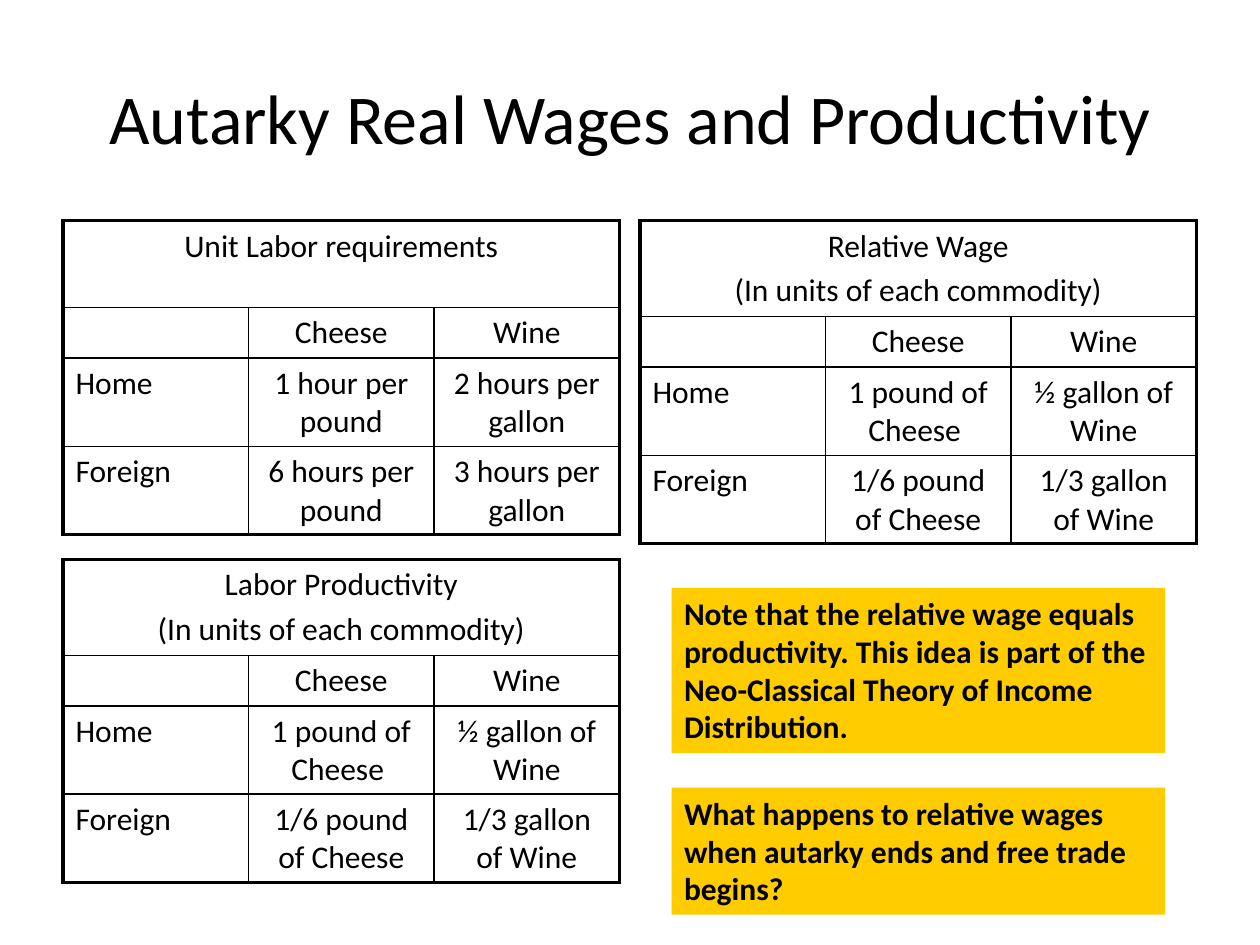
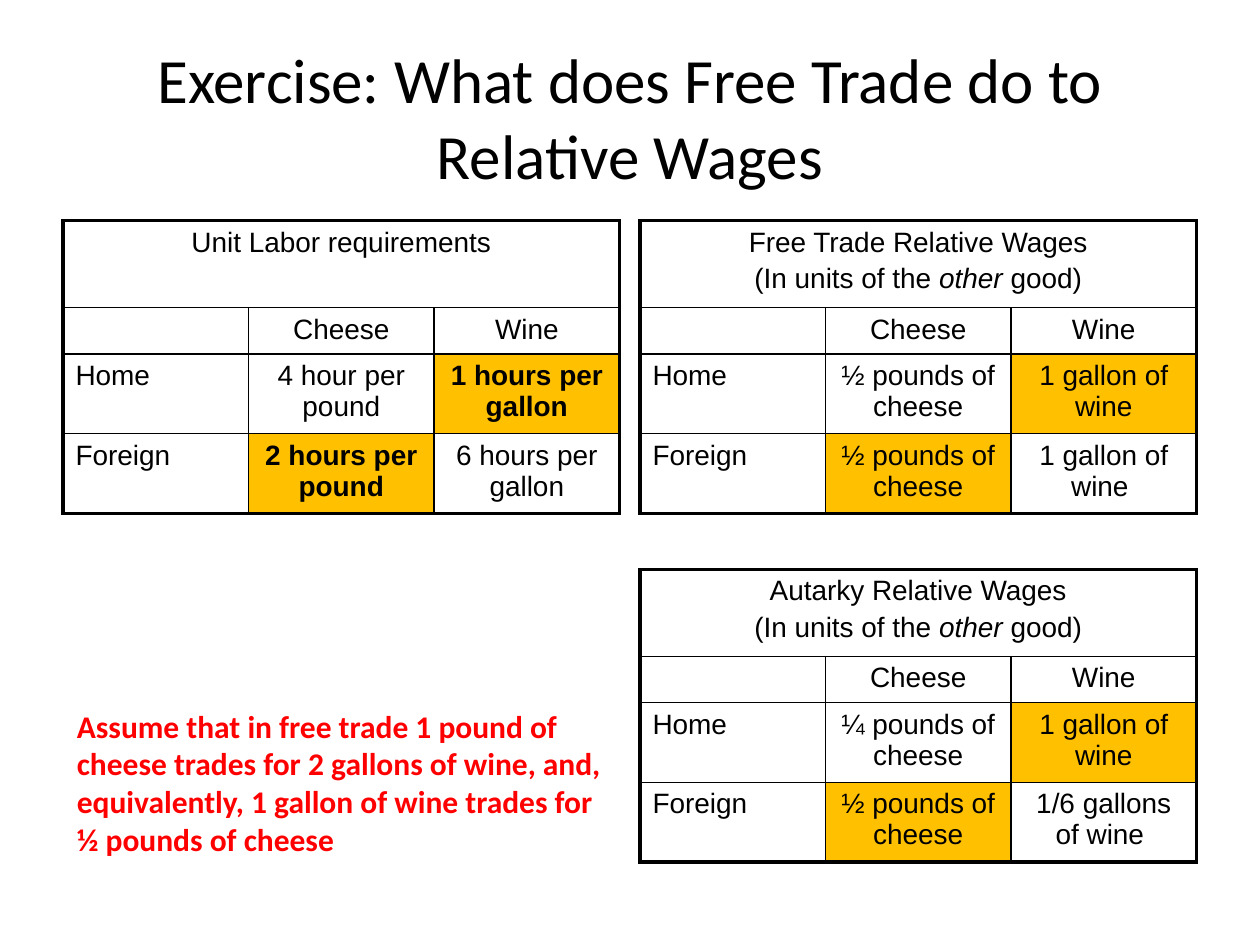
from dataclasses import dataclass

from lxml.etree import SubElement
from pptx import Presentation
from pptx.dml.color import RGBColor
from pptx.enum.shapes import MSO_SHAPE
from pptx.enum.text import MSO_ANCHOR as Anchor, MSO_AUTO_SIZE as AutoSize, PP_ALIGN as Align
from pptx.oxml.ns import qn
from pptx.util import Cm, Pt


@dataclass(frozen=True)
class Theme:
    ink: str = "000000"
    note_fill: str = "FFCC00"
    highlight: str = "FFC000"
    warning: str = "FF0000"
    font: str = "Calibri"
    exercise_font: str = "Arial"
    title_size: int = 40
    long_title_size: int = 36
    body_size: int = 18
    exercise_size: int = 16
    outer_line: float = 2.25
    inner_line: float = 1


THEME = Theme()
LEFT, RIGHT, TOP = 1.27, 12.9, 4.45
COLUMN = 3.74
NOTE_LEFT, NOTE_WIDTH = 13.54, 9.95
ADVANTAGE_CELLS = {(2, 2), (3, 1)}

GOODS = ["", "Cheese", "Wine"]
OUTPUT_PER_HOUR = [
    ["Home", "1 pound of Cheese ", "½ gallon of Wine"],
    ["Foreign", "1/6 pound of Cheese", "1/3 gallon of Wine"],
]


@dataclass(frozen=True)
class TableStyle:
    font: str
    size: int
    rows: tuple
    highlights: frozenset = frozenset()


SHORT_ROWS = TableStyle(THEME.font, THEME.body_size, (1.75, 1.02, 1.78, 1.78))
TALL_ROWS = TableStyle(THEME.font, THEME.body_size, (1.93, 1.02, 1.78, 1.78))
EXERCISE = TableStyle(THEME.exercise_font, THEME.exercise_size,
                      (1.75, 0.93, 1.6, 1.6), frozenset(ADVANTAGE_CELLS))


def add_text_run(p, text, size, font=THEME.font, color=THEME.ink, bold=False, italic=False):
    r = p.add_run()
    r.text = text
    r.font.size, r.font.name = Pt(size), font
    r.font.bold, r.font.italic = bold, italic
    r.font.color.rgb = RGBColor.from_string(color)


def add_title(s, text, size=THEME.title_size):
    tf = s.shapes.add_textbox(Cm(LEFT), Cm(0.76), Cm(22.86), Cm(3.18)).text_frame
    tf.word_wrap = True
    tf.vertical_anchor = Anchor.MIDDLE
    p = tf.paragraphs[0]
    p.alignment = Align.CENTER
    add_text_run(p, text, size)


def add_note(s, text, x, y, w, h, fill=None, color=THEME.ink):
    """Add a bold remark, on a coloured rectangle if a fill is given."""
    box = Cm(x), Cm(y), Cm(w), Cm(h)
    if fill:
        sp = s.shapes.add_shape(MSO_SHAPE.RECTANGLE, *box)
        sp.shadow.inherit = False
        sp.fill.solid()
        sp.fill.fore_color.rgb = RGBColor.from_string(fill)
        sp.line.fill.background()
    else:
        sp = s.shapes.add_textbox(*box)
    tf = sp.text_frame
    tf.word_wrap = True
    tf.auto_size = AutoSize.SHAPE_TO_FIT_TEXT
    tf.vertical_anchor = Anchor.TOP
    p = tf.paragraphs[0]
    p.alignment = Align.LEFT
    add_text_run(p, text, THEME.body_size, color=color, bold=True)


def set_borders(cell, outer_sides):
    """Draw the four cell borders, thicker on the sides in outer_sides."""
    tc_pr = cell._tc.get_or_add_tcPr()
    for i, side in enumerate("LRTB"):
        width = THEME.outer_line if side in outer_sides else THEME.inner_line
        ln = tc_pr.makeelement(qn(f"a:ln{side}"), {"w": str(Pt(width))})
        fill = SubElement(ln, qn("a:solidFill"))
        SubElement(fill, qn("a:srgbClr"), val=THEME.ink)
        tc_pr.insert(i, ln)


def fill_cell(cell, text, style, align, bold=False):
    """Write one paragraph per line; words between asterisks are italic."""
    tf = cell.text_frame
    for i, line in enumerate(text.split("\n")):
        p = tf.add_paragraph() if i else tf.paragraphs[0]
        p.alignment = align
        if i:
            p.space_before = Pt(0.2 * style.size)
        for k, part in enumerate(line.split("*")):
            if part:
                add_text_run(p, part, style.size, style.font, bold=bold, italic=k % 2 == 1)
        if not line:
            SubElement(p._p, qn("a:endParaRPr"), sz=str(style.size * 100))


def add_wage_table(s, x, y, heading, body, style, bold_highlights=False):
    """Add a two-country, two-good table under a merged heading."""
    n_rows, n_cols = len(style.rows), len(GOODS)
    table = s.shapes.add_table(n_rows, n_cols, Cm(x), Cm(y),
                               Cm(COLUMN * n_cols), Cm(sum(style.rows))).table
    table.first_row = table.horz_banding = False
    for column in table.columns:
        column.width = Cm(COLUMN)
    for row, height in zip(table.rows, style.rows):
        row.height = Cm(height)
    table.cell(0, 0).merge(table.cell(0, n_cols - 1))

    for i, texts in enumerate([[heading, "", ""], GOODS, *body]):
        for j, text in enumerate(texts):
            cell = table.cell(i, j)
            marked = (i, j) in style.highlights
            if marked:
                cell.fill.solid()
                cell.fill.fore_color.rgb = RGBColor.from_string(THEME.highlight)
            else:
                cell.fill.background()
            align = Align.LEFT if i > 1 and j == 0 else Align.CENTER
            fill_cell(cell, text, style, align, marked and bold_highlights)
            edges = {"L": j == 0, "R": i == 0 or j == n_cols - 1,
                     "T": i == 0, "B": i == n_rows - 1}
            set_borders(cell, [side for side, outer in edges.items() if outer])


def build_autarky(s):
    add_title(s, "Autarky Real Wages and Productivity")
    add_wage_table(s, LEFT, TOP, "Unit Labor requirements", [
        ["Home", "1 hour per pound", "2 hours per gallon"],
        ["Foreign", "6 hours per pound", "3 hours per gallon"],
    ], SHORT_ROWS)
    for x, y, name in [(RIGHT, TOP, "Relative Wage"), (LEFT, 11.28, "Labor Productivity")]:
        add_wage_table(s, x, y, f"{name}\n(In units of each commodity)",
                       OUTPUT_PER_HOUR, TALL_ROWS)
    add_note(s, "Note that the relative wage equals productivity. This idea is part of "
             "the Neo-Classical Theory of Income Distribution.",
             NOTE_LEFT, 11.85, NOTE_WIDTH, 3.33, THEME.note_fill)
    add_note(s, "What happens to relative wages when autarky ends and free trade begins?",
             NOTE_LEFT, 15.88, NOTE_WIDTH, 2.56, THEME.note_fill)


def build_exercise(s):
    add_title(s, "Exercise: What does Free Trade do to Relative Wages", THEME.long_title_size)
    add_wage_table(s, LEFT, TOP, "Unit Labor requirements", [
        ["Home", "4 hour per pound", "1 hours per gallon"],
        ["Foreign", "2 hours per pound", "6 hours per gallon"],
    ], EXERCISE, bold_highlights=True)
    wages = [
        (TOP, "Free Trade", "½ pounds of cheese", "1 gallon of wine "),
        (11.48, "Autarky", "¼ pounds of cheese", "1/6 gallons of wine "),
    ]
    for y, regime, home_cheese, foreign_wine in wages:
        add_wage_table(s, RIGHT, y,
                       f"{regime} Relative Wages\n(In units of the *other* good)", [
                           ["Home", home_cheese, "1 gallon of wine"],
                           ["Foreign", "½ pounds of cheese", foreign_wine],
                       ], EXERCISE)
    add_note(s, "Assume that in free trade 1 pound of cheese trades for 2 gallons of wine, "
             "and, equivalently, 1 gallon of wine trades for ½ pounds of cheese",
             1.3, 14.12, 11.23, 3.33, color=THEME.warning)


def main():
    prs = Presentation()
    prs.slide_width, prs.slide_height = Cm(25.4), Cm(19.05)
    for build in (build_autarky, build_exercise):
        build(prs.slides.add_slide(prs.slide_layouts[6]))
    prs.save("out.pptx")


if __name__ == "__main__":
    main()
